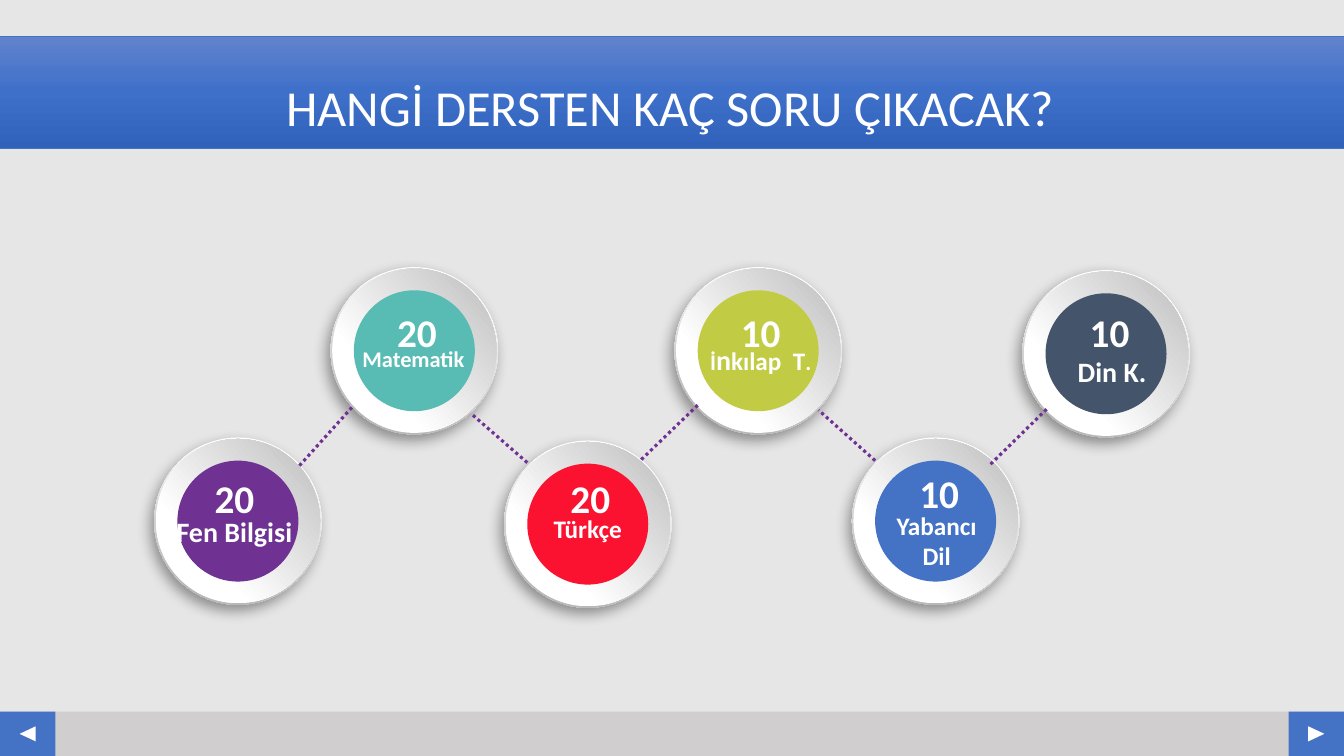
from lxml import etree
from pptx import Presentation
from pptx.dml.color import RGBColor
from pptx.enum.dml import MSO_LINE
from pptx.enum.shapes import MSO_CONNECTOR, MSO_SHAPE
from pptx.enum.text import MSO_ANCHOR, PP_ALIGN
from pptx.oxml.ns import qn
from pptx.util import Inches, Pt

RECTANGLE, OVAL, TRIANGLE = MSO_SHAPE.RECTANGLE, MSO_SHAPE.OVAL, MSO_SHAPE.ISOSCELES_TRIANGLE
STRAIGHT, DOTTED = MSO_CONNECTOR.STRAIGHT, MSO_LINE.ROUND_DOT
LEFT, CENTER = PP_ALIGN.LEFT, PP_ALIGN.CENTER
TOP, MIDDLE = MSO_ANCHOR.TOP, MSO_ANCHOR.MIDDLE

WIDTH, HEIGHT = 13.33, 7.5
WHITE, BLUE, PURPLE = "FFFFFF", "4472C4", "6F3293"
RIM, RING, DISC = 1.66, 1.63, 1.2
RIM_STOPS = [(17, WHITE), (88, "B8B8B8")]
RING_STOPS = [(29, WHITE), (98, "BFBFBF")]
TITLE_STOPS = [(0, "6183CB"), (50, "3E70CA"), (100, "3062BB")]

SUBJECTS = [
    (4.11, 3.48, "58BBB4", "20", (3.84, 3.01), [("Matematik", 16)], (3.49, 3.38, 1.22, 0.37)),
    (2.36, 5.17, PURPLE, "20", (2.03, 4.66), [("Fen Bilgisi", 20)], (1.59, 5.06, 1.47, 0.44)),
    (5.83, 5.2, "FA1230", "20", (5.56, 4.66), [("Türkçe", 18)], (5.23, 5.04, 1.2, 0.4)),
    (9.28, 5.17, BLUE, "10", (9.02, 4.61), [("Yabancı Dil", 18)], (8.69, 5.01, 1.2, 0.71)),
    (10.97, 3.51, "44546A", "10", (10.71, 3.01), [("Din K.", 20)], (10.43, 3.47, 1.2, 0.44)),
    (7.52, 3.48, "C2CB44", "10", (7.25, 3.01),
     [("İ", 16), ("n", 20), ("kılap  T", 18), (".", 16)], (6.93, 3.35, 1.23, 0.44)),
]
LINKS = [
    (2.97, 4.62, 3.51, 4.02),
    (5.23, 4.59, 4.68, 4.11),
    (6.92, 4.02, 6.35, 4.57),
    (10.38, 4.06, 9.82, 4.61),
    (8.68, 4.57, 8.12, 4.07),
]


def rgb(value):
    """Turn a hex string into a colour."""
    return RGBColor.from_string(value)


def apply(target, values):
    """Set every attribute named in a dict of format values."""
    for name, value in values.items():
        setattr(target, name, value)


class ExamSlide:
    """Hold the style and the slide, and draw each kind of element."""

    font = "Calibri"

    def __init__(self, deck, background):
        """Add a title-only slide with a plain background."""
        self.slide = deck.slides.add_slide(deck.slide_layouts[5])
        fill = self.slide.background.fill
        fill.solid()
        fill.fore_color.rgb = rgb(background)

    def place(self, shape, box):
        """Move and size a shape in inches."""
        apply(shape, dict(zip(("left", "top", "width", "height"), map(Inches, box))))

    def shape(self, kind, box, color, rotation=0):
        """Add a flat preset shape without a line."""
        shape = self.slide.shapes.add_shape(kind, *map(Inches, box))
        shape.shadow.inherit = False
        shape.rotation = rotation
        shape.line.fill.background()
        shape.fill.solid()
        shape.fill.fore_color.rgb = rgb(color)
        return shape

    def gradient(self, shape, stops, angle):
        """Fill a shape with a linear gradient, angle counter-clockwise."""
        shape.fill.gradient()
        shape.fill.gradient_angle = angle
        stop_list = shape._element.spPr.find(qn("a:gradFill")).find(qn("a:gsLst"))
        for stop in list(stop_list):
            stop_list.remove(stop)
        for position, color in stops:
            stop = etree.SubElement(stop_list, qn("a:gs"), pos=str(position * 1000))
            etree.SubElement(stop, qn("a:srgbClr"), val=color)

    def drop_shadow(self, shape):
        """Cast a soft shadow to the lower left."""
        effects = shape._element.spPr.find(qn("a:effectLst"))
        shadow = etree.SubElement(
            effects, qn("a:outerShdw"), blurRad=str(Pt(10)), dist=str(Pt(5)),
            dir=str(123 * 60000), algn="ctr", rotWithShape="0")
        color = etree.SubElement(shadow, qn("a:srgbClr"), val="000000")
        etree.SubElement(color, qn("a:alpha"), val="39000")

    def circle(self, x, y, size, color):
        """Add a circle around a centre point."""
        return self.shape(OVAL, (x - size / 2, y - size / 2, size, size), color)

    def add_runs(self, paragraph, runs, align, bold):
        """Fill a paragraph with white runs of given sizes."""
        paragraph.alignment = align
        for text, size in runs:
            run = paragraph.add_run()
            run.text = text
            apply(run.font, {"name": self.font, "size": Pt(size), "bold": bold})
            run.font.color.rgb = rgb(WHITE)

    def text(self, box, runs, align=CENTER, wrap=True):
        """Add a bold text box."""
        frame = self.slide.shapes.add_textbox(*map(Inches, box)).text_frame
        apply(frame, {"word_wrap": wrap, "vertical_anchor": TOP})
        self.add_runs(frame.paragraphs[0], runs, align, True)

    def title(self, text):
        """Turn the title placeholder into the gradient band."""
        band = self.slide.shapes.title
        self.place(band, (-0.03, 0.36, 13.36, 1.11))
        self.gradient(band, TITLE_STOPS, 270)
        band.line.color.rgb = rgb(BLUE)
        band.line.width = Pt(0.5)
        frame = band.text_frame
        apply(frame, {"word_wrap": True, "vertical_anchor": MIDDLE,
                      "margin_top": Inches(0.28), "margin_bottom": 0})
        self.add_runs(frame.paragraphs[0], [(text, 36)], CENTER, False)

    def badge(self, x, y, color):
        """Draw a raised ring with a coloured disc."""
        rim = self.circle(x, y, RIM, WHITE)
        self.gradient(rim, RIM_STOPS, 253)
        self.drop_shadow(rim)
        self.gradient(self.circle(x, y, RING, WHITE), RING_STOPS, 42)
        self.circle(x, y, DISC, color)

    def link(self, ends):
        """Join two badges with a dotted line."""
        line = self.slide.shapes.add_connector(STRAIGHT, *map(Inches, ends))
        apply(line.line, {"width": Pt(2.25), "dash_style": DOTTED})
        line.line.color.rgb = rgb(PURPLE)
        etree.SubElement(line._element.spPr, qn("a:effectLst"))

    def footer(self):
        """Draw the bottom bar with an arrow button at each end."""
        top, height, button = 7.06, 0.44, 0.55
        self.shape(RECTANGLE, (0, top, WIDTH, height), "D0CECE")
        for left, rotation in ((0, 270), (WIDTH - button, 90)):
            self.shape(RECTANGLE, (left, top, button, height), BLUE)
            self.shape(TRIANGLE, (left + 0.2, 7.2, 0.15, 0.16), WHITE, rotation)


def main():
    """Build and save the slide."""
    deck = Presentation()
    apply(deck, {"slide_width": Inches(WIDTH), "slide_height": Inches(HEIGHT)})
    exam = ExamSlide(deck, "E7E6E6")
    exam.footer()
    exam.title("HANGİ DERSTEN KAÇ SORU ÇIKACAK?")
    for x, y, color, *_ in SUBJECTS:
        exam.badge(x, y, color)
    for ends in LINKS:
        exam.link(ends)
    for _, _, _, count, corner, subject, subject_box in SUBJECTS:
        exam.text((*corner, 0.6, 0.57), [(count, 28)], LEFT, False)
        exam.text(subject_box, subject)
    deck.save("out.pptx")


if __name__ == "__main__":
    main()
